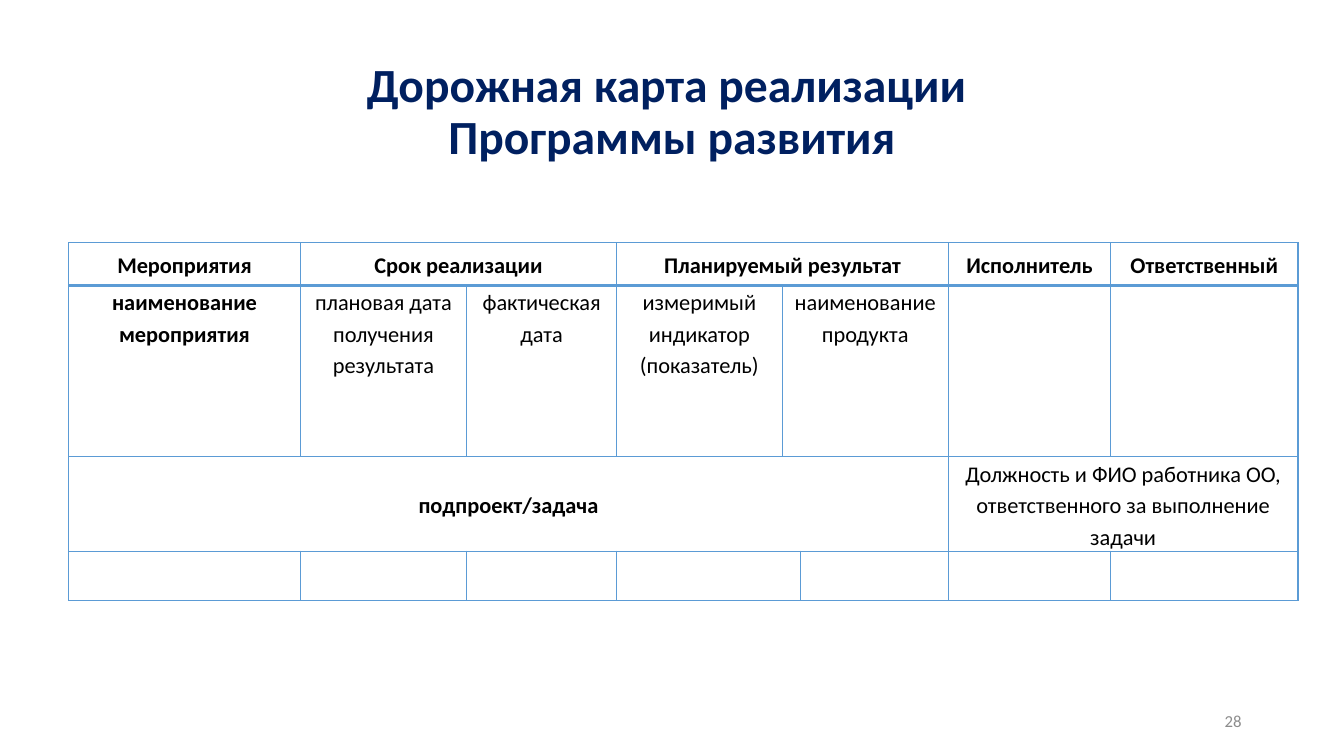
"""Builds the slide with the roadmap table of the development programme."""
from dataclasses import dataclass

from lxml.etree import SubElement
from pptx import Presentation
from pptx.dml.color import RGBColor
from pptx.enum.text import MSO_ANCHOR as Anchor, MSO_AUTO_SIZE as AutoSize, PP_ALIGN as Align
from pptx.oxml import parse_xml
from pptx.oxml.ns import nsdecls, qn
from pptx.util import Cm, Pt

FONT = "Calibri"
BORDER = "5B9BD5"
COLUMN_WIDTHS = (5.84, 4.19, 3.78, 4.17, 0.46, 3.73, 4.09, 4.72)
ROW_HEIGHTS = (1.07, 4.32, 2.16, 1.24)


@dataclass(frozen=True)
class Entry:
    """A table cell: its text, the columns it covers and its weight."""
    text: str = ""
    span: int = 1
    bold: bool = False


@dataclass(frozen=True)
class Band:
    """A table row: its entries, vertical anchor and bottom line width."""
    entries: tuple[Entry, ...]
    anchor: Anchor = Anchor.TOP
    bottom_line: float = 1


BANDS = (
    Band((Entry("Мероприятия", bold=True),
          Entry("Срок реализации", 2, True),
          Entry("Планируемый результат", 3, True),
          Entry("Исполнитель", bold=True),
          Entry("Ответственный", bold=True)), Anchor.MIDDLE, 2),
    Band((Entry("наименование мероприятия", bold=True),
          Entry("плановая дата получения результата"),
          Entry("фактическая дата"),
          Entry("измеримый индикатор (показатель)"),
          Entry("наименование продукта", 2),
          Entry(), Entry())),
    Band((Entry("подпроект/задача", 6, True),
          Entry("Должность и ФИО работника ОО, ответственного за выполнение задачи", 2)),
         Anchor.MIDDLE),
    Band((Entry(), Entry(), Entry(), Entry(span=2), Entry(), Entry(), Entry())),
)


def color(value: str) -> RGBColor:
    """Turn a hex string into a colour."""
    return RGBColor.from_string(value)


def style(para, size: float, shade: str, align: Align, bold: bool = False) -> None:
    """Format a whole paragraph."""
    para.alignment = align
    font = para.font
    font.name, font.size, font.bold = FONT, Pt(size), bold
    font.color.rgb = color(shade)


def add_borders(cell, bottom_line: float) -> None:
    """Draw the four lines of a cell ahead of its fill."""
    properties = cell._tc.get_or_add_tcPr()
    for index, side in enumerate(("lnL", "lnR", "lnT", "lnB")):
        width = bottom_line if side == "lnB" else 1
        line = parse_xml(f'<a:{side} {nsdecls("a")} w="{Pt(width)}"/>')
        fill = SubElement(line, qn("a:solidFill"))
        SubElement(fill, qn("a:srgbClr"), val=BORDER)
        properties.insert(index, line)


def format_cell(cell, anchor: Anchor, bottom_line: float) -> None:
    """Give a cell its margins, anchor, empty fill and lines."""
    cell.margin_left = cell.margin_right = Cm(0.18)
    cell.margin_top = cell.margin_bottom = 0
    cell.vertical_anchor = anchor
    cell.fill.background()
    add_borders(cell, bottom_line)


def add_title(page) -> None:
    """Fill and place the title placeholder."""
    title = page.shapes.title
    title.left, title.top, title.width, title.height = Cm(2.33), Cm(1.01), Cm(29.21), Cm(3.68)
    frame = title.text_frame
    frame.auto_size = AutoSize.NONE
    frame.vertical_anchor = Anchor.MIDDLE
    frame.text = "Дорожная карта реализации \vПрограммы развития"
    para = frame.paragraphs[0]
    para.line_spacing = 0.9
    style(para, 34, "002060", Align.CENTER, True)


def add_roadmap(page) -> None:
    """Add the roadmap table."""
    table = page.shapes.add_table(
        len(BANDS), len(COLUMN_WIDTHS), Cm(1.73), Cm(6.12),
        Cm(sum(COLUMN_WIDTHS)), Cm(sum(ROW_HEIGHTS))).table
    table.first_row = table.horz_banding = False
    for column, width in zip(table.columns, COLUMN_WIDTHS):
        column.width = Cm(width)
    for row_index, (band, height) in enumerate(zip(BANDS, ROW_HEIGHTS)):
        table.rows[row_index].height = Cm(height)
        for cell in table.rows[row_index].cells:
            format_cell(cell, band.anchor, band.bottom_line)
        column_index = 0
        for entry in band.entries:
            cell = table.cell(row_index, column_index)
            column_index += entry.span
            if entry.span > 1:
                cell.merge(table.cell(row_index, column_index - 1))
            cell.text = entry.text
            para = cell.text_frame.paragraphs[0]
            para.line_spacing = 1.15
            style(para, 16, "000000", Align.CENTER, entry.bold)


def add_page_number(page) -> None:
    """Add the page number at the bottom right."""
    box = page.shapes.add_textbox(Cm(23.92), Cm(17.66), Cm(7.62), Cm(1.01))
    frame = box.text_frame
    frame.word_wrap = True
    frame.vertical_anchor = Anchor.MIDDLE
    frame.text = "28"
    style(frame.paragraphs[0], 12, "8C8C8C", Align.RIGHT)


def main() -> None:
    """Build and save the deck."""
    deck = Presentation()
    deck.slide_width, deck.slide_height = Cm(33.87), Cm(19.05)
    page = deck.slides.add_slide(deck.slide_layouts[5])
    add_title(page)
    add_roadmap(page)
    add_page_number(page)
    deck.save("out.pptx")


if __name__ == "__main__":
    main()
